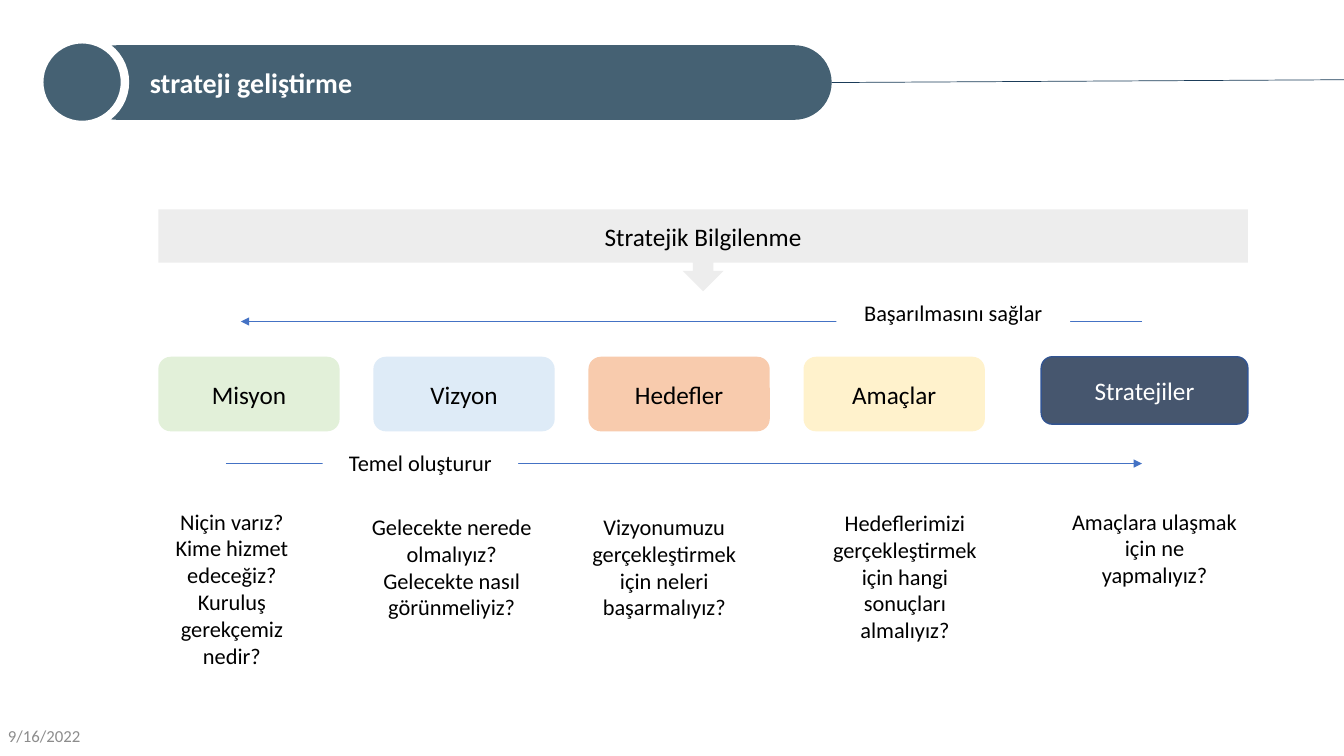
from dataclasses import dataclass
from typing import Optional

from lxml import etree
from pptx import Presentation
from pptx.dml.color import RGBColor
from pptx.enum.shapes import MSO_CONNECTOR, MSO_SHAPE as SHAPE
from pptx.enum.text import MSO_ANCHOR as ANCHOR, PP_ALIGN as ALIGN
from pptx.oxml.ns import qn
from pptx.util import Cm, Pt

FONT = "Calibri"
WHITE = RGBColor(0xFF, 0xFF, 0xFF)
BLACK = RGBColor(0x00, 0x00, 0x00)
TEAL = RGBColor(0x45, 0x61, 0x73)
NAVY = RGBColor(0x1B, 0x3C, 0x59)
BLUE = RGBColor(0x44, 0x72, 0xC4)
SLATE = RGBColor(0x46, 0x56, 0x6E)
SLATE_EDGE = RGBColor(0x32, 0x54, 0x91)
DATE_GREY = RGBColor(0x8C, 0x8C, 0x8C)
PALE_GREY = RGBColor(0xED, 0xED, 0xED)
GREEN = RGBColor(0xE2, 0xF0, 0xD9)
SKY = RGBColor(0xDE, 0xEB, 0xF7)
PEACH = RGBColor(0xF8, 0xCB, 0xAD)
YELLOW = RGBColor(0xFF, 0xF2, 0xCC)

STEP_LEFT, STEP_PITCH, STEP_TOP = 3.99, 5.42, 8.99


@dataclass
class Box:
    """Place and size in centimetres."""
    left: float
    top: float
    width: float
    height: float

    def lengths(self) -> tuple:
        return Cm(self.left), Cm(self.top), Cm(self.width), Cm(self.height)


@dataclass
class Step:
    name: str
    fill: RGBColor
    questions: list[str]
    question_box: Box


@dataclass
class Flow:
    """A labelled arrow running along the row of steps."""
    start: float
    end: float
    y: float
    label: str
    label_box: Box


STEPS = [
    Step("Misyon", GREEN,
         ["Niçin varız?", "Kime hizmet edeceğiz?", "Kuruluş gerekçemiz nedir?"],
         Box(3.56, 12.67, 4.57, 4.37)),
    Step("Vizyon", SKY,
         ["Gelecekte nerede olmalıyız?", "Gelecekte nasıl görünmeliyiz?"],
         Box(8.92, 12.8, 4.93, 3)),
    Step("Hedefler", PEACH,
         ["Vizyonumuzu gerçekleştirmek için neleri başarmalıyız?"],
         Box(14.63, 12.8, 4.22, 3)),
    Step("Amaçlar", YELLOW,
         ["Hedeflerimizi gerçekleştirmek için hangi sonuçları almalıyız?"],
         Box(20.47, 12.7, 4.67, 3.68)),
    Step("Stratejiler", SLATE,
         ["Amaçlara ulaşmak için ne yapmalıyız?"],
         Box(26.72, 12.67, 4.75, 2.31)),
]

FLOWS = [
    Flow(5.69, 28.78, 11.68, "Temel oluşturur", Box(8.13, 11.2, 4.93, 0.94)),
    Flow(28.78, 6.07, 8.1, "Başarılmasını sağlar", Box(21.08, 7.42, 5.89, 0.94)),
]


def write(sp, lines: list[str], size: float, color: RGBColor = BLACK,
          align: ALIGN = ALIGN.CENTER, anchor: ANCHOR = ANCHOR.MIDDLE,
          bold: bool = False) -> None:
    tf = sp.text_frame
    tf.word_wrap = True
    tf.vertical_anchor = anchor
    tf.text = "\n".join(lines)
    for p in tf.paragraphs:
        p.alignment = align
        p.font.name, p.font.size, p.font.bold = FONT, Pt(size), bold
        p.font.color.rgb = color


def add_filled(slide, kind: SHAPE, box: Box, fill: RGBColor,
               edge: Optional[RGBColor] = None, edge_width: float = 1):
    sp = slide.shapes.add_shape(kind, *box.lengths())
    sp.shadow.inherit = False
    sp.fill.solid()
    sp.fill.fore_color.rgb = fill
    if edge is None:
        sp.line.fill.background()
    else:
        sp.line.color.rgb = edge
        sp.line.width = Pt(edge_width)
    return sp


def add_line(slide, x1: float, y1: float, x2: float, y2: float,
             color: RGBColor, arrow: bool = False) -> None:
    line = slide.shapes.add_connector(
        MSO_CONNECTOR.STRAIGHT, Cm(x1), Cm(y1), Cm(x2), Cm(y2))
    line.line.color.rgb = color
    line.line.width = Pt(0.5)
    if arrow:
        etree.SubElement(line.line._get_or_add_ln(), qn("a:tailEnd"), type="triangle")
    etree.SubElement(line._element.spPr, qn("a:effectLst"))


def add_header(slide) -> None:
    title = add_filled(slide, SHAPE.ROUNDED_RECTANGLE, Box(2.01, 1.14, 18.95, 1.88), TEAL)
    title.adjustments[0] = 0.5
    title.text_frame.margin_left = Cm(1.49)
    write(title, ["strateji geliştirme"], 20, WHITE, ALIGN.LEFT, bold=True)
    add_filled(slide, SHAPE.OVAL, Box(0.99, 0.99, 2.16, 2.16), TEAL, WHITE, 6)
    add_line(slide, 20.96, 2.08, 33.87, 2.01, NAVY)


def add_step(slide, index: int, step: Step) -> None:
    if index < len(STEPS) - 1:
        box = Box(STEP_LEFT + index * STEP_PITCH, STEP_TOP, 4.57, 1.88)
        edge, color = None, BLACK
    else:
        box = Box(26.24, STEP_TOP, 5.21, 1.7)
        edge, color = SLATE_EDGE, WHITE
    sp = add_filled(slide, SHAPE.ROUNDED_RECTANGLE, box, step.fill, edge)
    write(sp, [step.name], 18, color)
    questions = slide.shapes.add_textbox(*step.question_box.lengths())
    write(questions, step.questions, 16, anchor=ANCHOR.TOP)


def add_flow(slide, flow: Flow) -> None:
    add_line(slide, flow.start, flow.y, flow.end, flow.y, BLUE, arrow=True)
    label = add_filled(slide, SHAPE.RECTANGLE, flow.label_box, WHITE)
    write(label, [flow.label], 16, anchor=ANCHOR.TOP)


def main() -> None:
    prs = Presentation()
    prs.slide_width, prs.slide_height = Cm(33.87), Cm(19.05)
    slide = prs.slides.add_slide(prs.slide_layouts[6])
    add_header(slide)
    date = slide.shapes.add_textbox(*Box(-0.05, 18.03, 7.62, 1.02).lengths())
    write(date, ["9/16/2022"], 12, DATE_GREY, ALIGN.LEFT)
    for index, step in enumerate(STEPS):
        add_step(slide, index, step)
    for flow in FLOWS:
        add_flow(slide, flow)
    callout = add_filled(slide, SHAPE.DOWN_ARROW_CALLOUT,
                         Box(STEP_LEFT, 5.28, 27.46, 2.06), PALE_GREY)
    write(callout, ["Stratejik Bilgilenme"], 18)
    prs.save("out.pptx")


if __name__ == "__main__":
    main()
